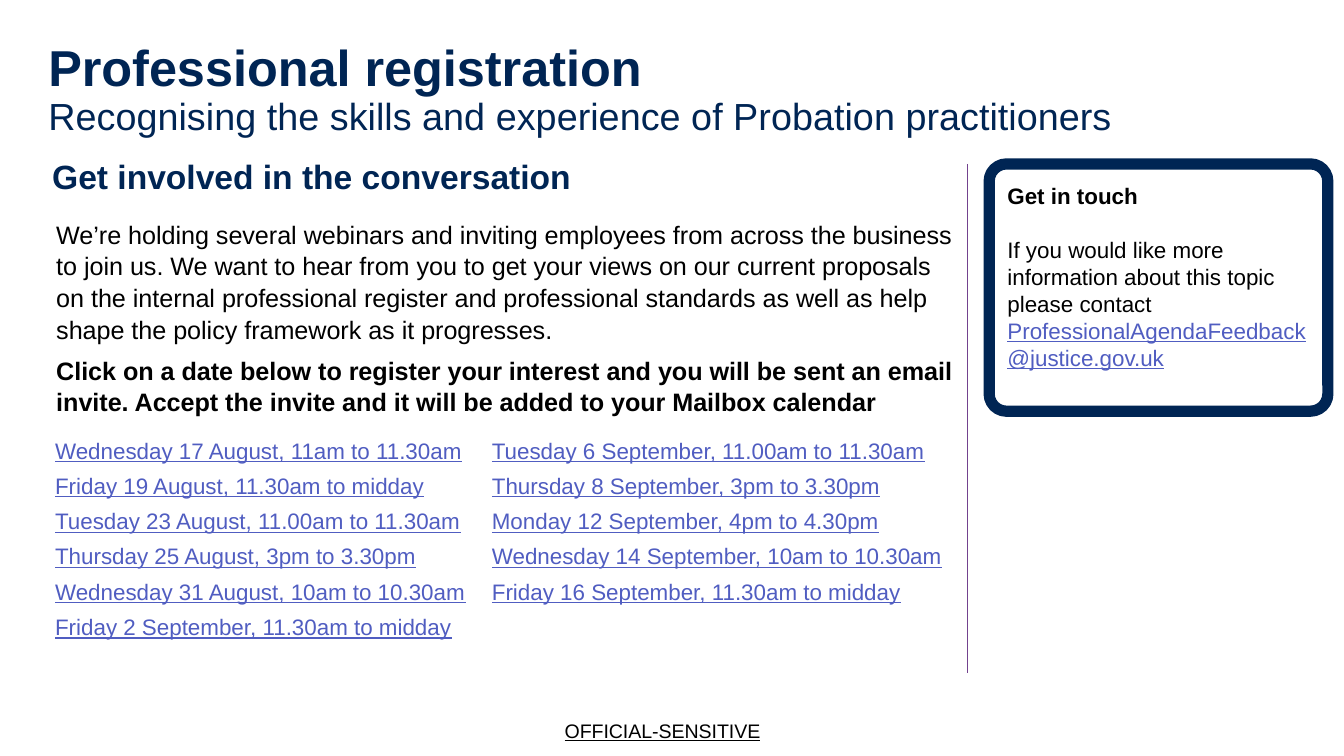
"""Build the professional registration slide."""
from pptx import Presentation
from pptx import util as u
from pptx.dml.color import RGBColor
from pptx.enum import shapes, text
from lxml import etree

NAVY, BLACK, LINK = "002554", "000000", "505DC1"
MIDDLE = text.MSO_ANCHOR.MIDDLE


def prepare(box, inset, anchor=text.MSO_ANCHOR.TOP):
    frame = box.text_frame
    frame.word_wrap = True
    frame.vertical_anchor = anchor
    frame.margin_left = frame.margin_right = u.Inches(inset[0])
    frame.margin_top = frame.margin_bottom = u.Inches(inset[1])
    return frame


def add_span(para, words, size, color, bold=False, underline=False):
    span = para.add_run()
    span.text = words
    span.font.name = "Arial"
    span.font.size = u.Pt(size)
    span.font.bold = bold
    span.font.underline = underline
    span.font.color.rgb = RGBColor.from_string(color)


deck = Presentation()
deck.slide_width = u.Inches(10)
deck.slide_height = u.Inches(10) * 9 // 16
page = deck.slides.add_slide(deck.slide_layouts[6])

marking = page.shapes.add_textbox(u.Inches(4.09), u.Inches(5.3), u.Inches(1.68), u.Inches(0.28))
frame = prepare(marking, (0.1, 0.05))
frame.word_wrap = False
para = frame.paragraphs[0]
para.alignment = text.PP_ALIGN.CENTER
add_span(para, "OFFICIAL-SENSITIVE", 10.5, BLACK, underline=True)

title = page.shapes.add_textbox(u.Inches(0.36), u.Inches(0.13), u.Inches(9.27), u.Inches(1.09))
para = prepare(title, (0, 0), MIDDLE).paragraphs[0]
para.line_spacing = 0.9
add_span(para, "Professional registration", 27, NAVY, bold=True)
para.add_line_break()
add_span(para, "Recognising the skills and experience of Probation practitioners", 20.25, NAVY)

heading = page.shapes.add_textbox(u.Inches(0.29), u.Inches(1.01), u.Inches(6.75), u.Inches(0.6))
para = prepare(heading, (0.1, 0.05), MIDDLE).paragraphs[0]
add_span(para, "Get involved in the conversation", 18, NAVY, bold=True)

intro = page.shapes.add_textbox(u.Inches(0.32), u.Inches(1.57), u.Inches(6.91), u.Inches(1.59))
frame = prepare(intro, (0.1, 0.05))
para = frame.paragraphs[0]
para.line_spacing = 1.05
para.space_after = u.Pt(6)
add_span(para, "We’re holding several webinars and inviting employees from across the business "
         "to join us. We want to hear from you to get your views on our current proposals "
         "on the internal professional register and professional standards as well as help "
         "shape the policy framework as it progresses.", 13.5, BLACK)
add_span(frame.add_paragraph(), "Click on a date below to register your interest and you will be "
         "sent an email invite. Accept the invite and it will be added to your Mailbox calendar",
         13.5, BLACK, bold=True)

date_columns = [
    (0.41, 3.09, ["Wednesday 17 August, 11am to 11.30am",
                  "Friday 19 August, 11.30am to midday",
                  "Tuesday 23 August, 11.00am to 11.30am",
                  "Thursday 25 August, 3pm to 3.30pm",
                  "Wednesday 31 August, 10am to 10.30am",
                  "Friday 2 September, 11.30am to midday"]),
    (3.66, 3.38, ["Tuesday 6 September, 11.00am to 11.30am",
                  "Thursday 8 September, 3pm to 3.30pm",
                  "Monday 12 September, 4pm to 4.30pm",
                  "Wednesday 14 September, 10am to 10.30am",
                  "Friday 16 September, 11.30am to midday"]),
]
for left, width, dates in date_columns:
    column = page.shapes.add_textbox(u.Inches(left), u.Inches(3.25), u.Inches(width), u.Inches(1.67))
    frame = prepare(column, (0, 0))
    for index, date in enumerate(dates):
        para = frame.add_paragraph() if index else frame.paragraphs[0]
        para.space_after = u.Pt(4.5)
        add_span(para, date, 12, LINK, underline=True)

contact = page.shapes.add_shape(shapes.MSO_SHAPE.ROUNDED_RECTANGLE, u.Inches(7.36), u.Inches(1.22),
                                u.Inches(2.52), u.Inches(1.84))
contact.adjustments[0] = 0.07
contact.shadow.inherit = False
contact.fill.background()
contact.line.color.rgb = RGBColor.from_string(NAVY)
contact.line.width = u.Pt(6)
frame = prepare(contact, (0.1, 0.1))
para = frame.paragraphs[0]
para.space_after = u.Pt(14.4)
add_span(para, "Get in touch", 12, BLACK, bold=True)
request = frame.add_paragraph()
add_span(request, "If you would like more information about this topic please contact ", 12, BLACK)
add_span(request, "ProfessionalAgendaFeedback@justice.gov.uk", 12, LINK, underline=True)
for para in frame.paragraphs:
    para.alignment = text.PP_ALIGN.LEFT

divider = page.shapes.add_connector(shapes.MSO_CONNECTOR.STRAIGHT, u.Inches(7.2), u.Inches(1.22),
                                    u.Inches(7.2), u.Inches(5.01))
divider.line.color.rgb = RGBColor.from_string("73428E")
divider.line.width = u.Pt(0.75)
etree.SubElement(divider._element.spPr, "{http://schemas.openxmlformats.org/drawingml/2006/main}effectLst")

deck.save("out.pptx")
